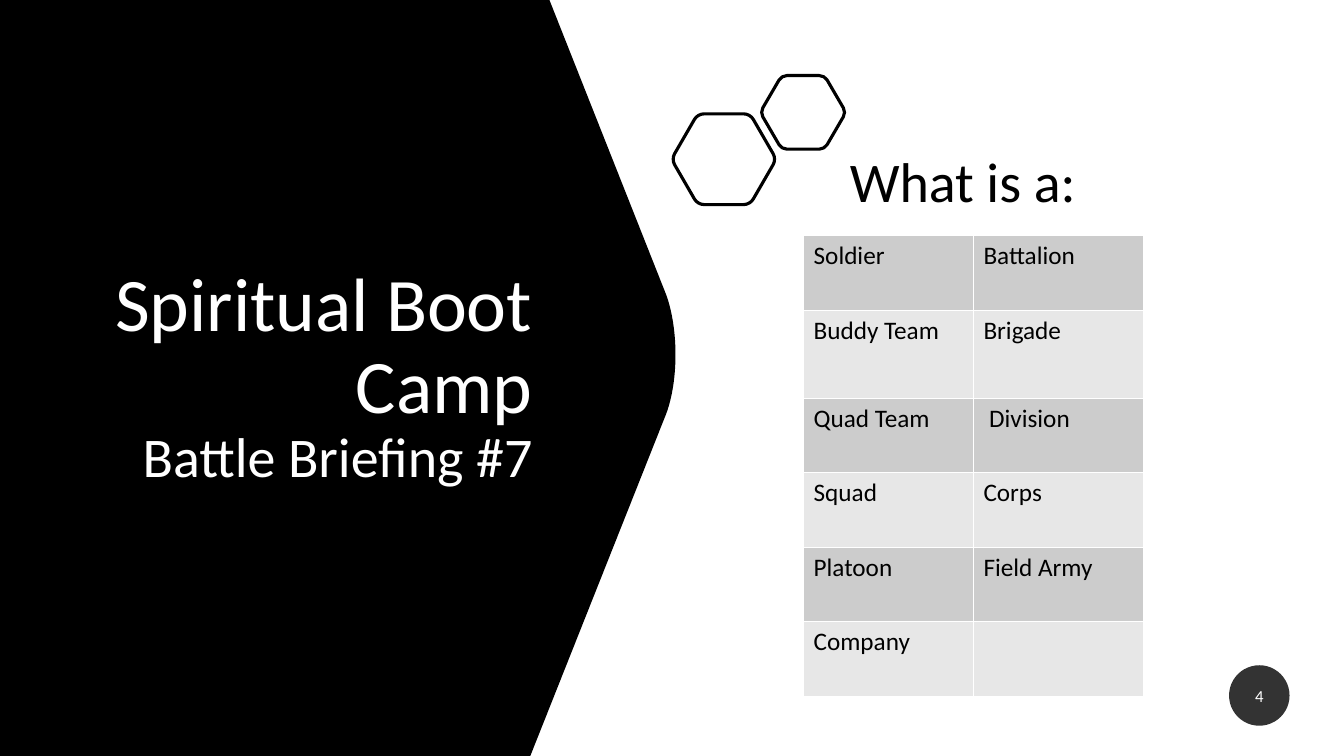
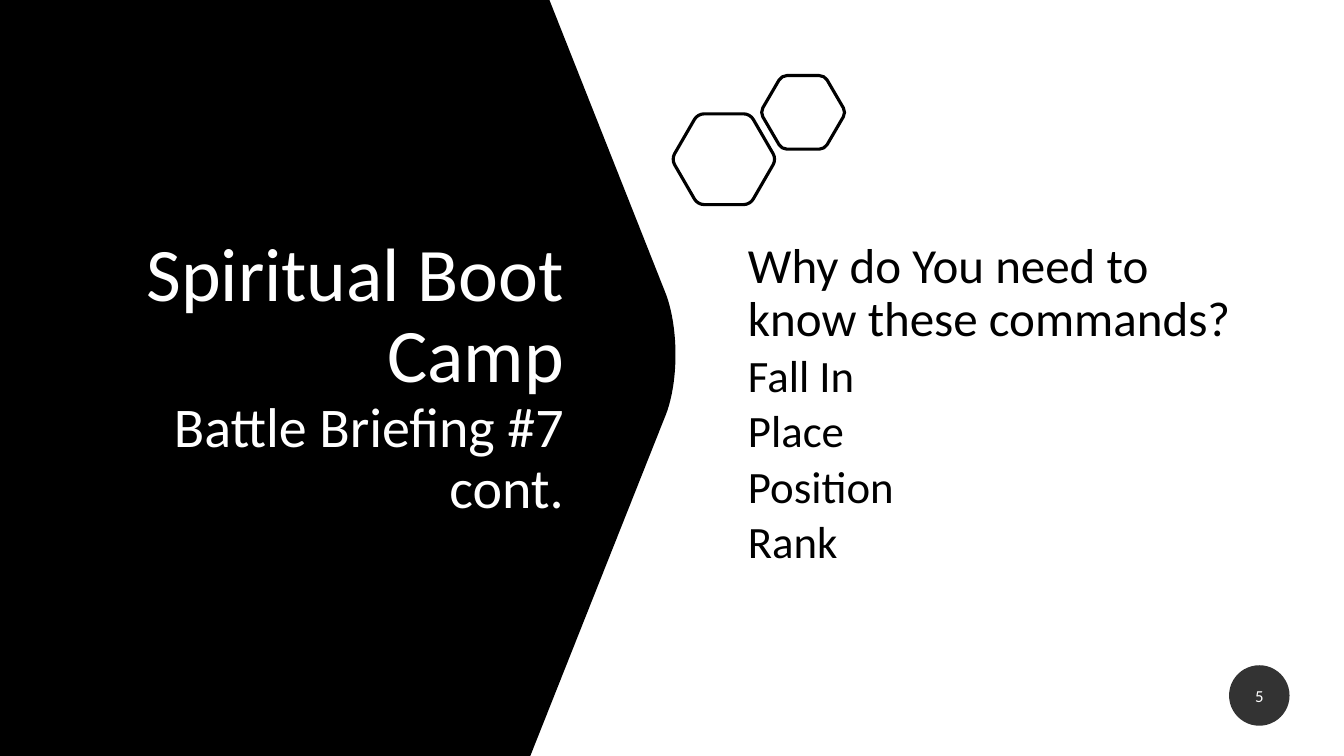
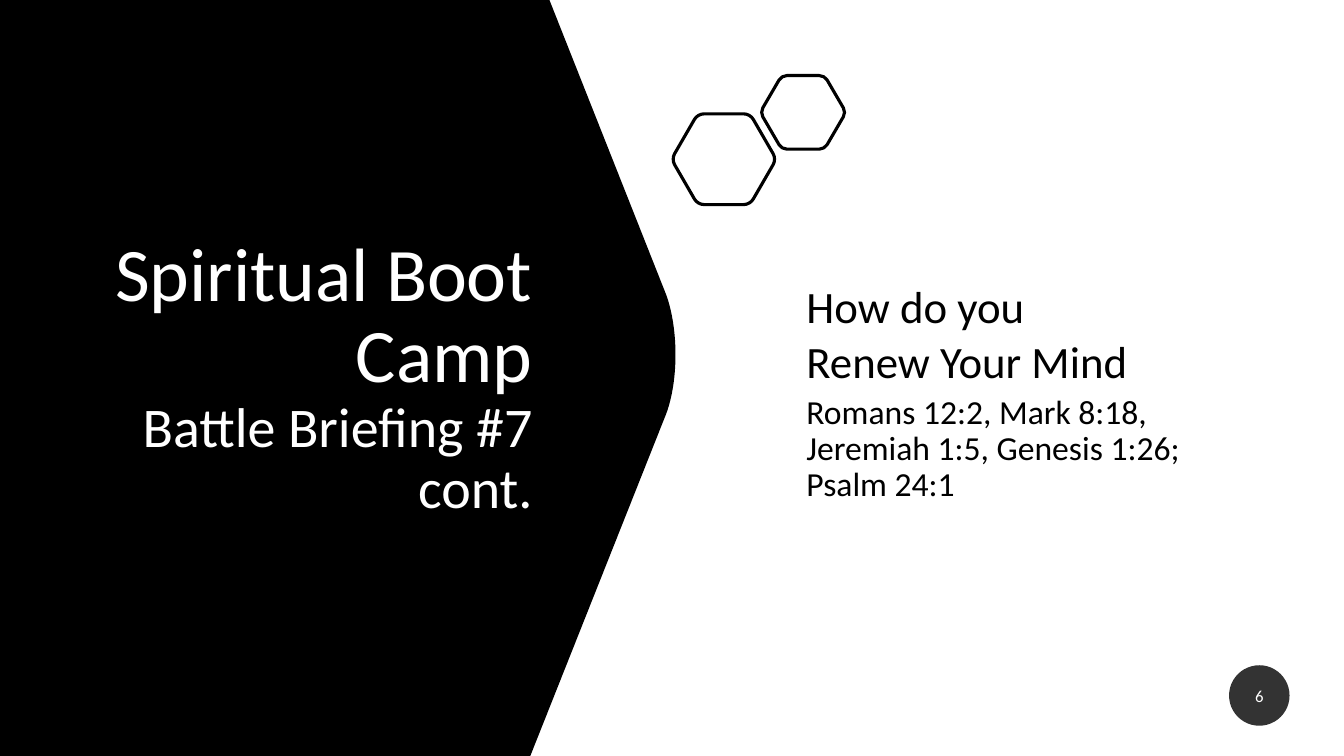
from lxml.etree import SubElement
from pptx import Presentation
from pptx.dml.color import RGBColor
from pptx.enum.shapes import MSO_SHAPE as Shape
from pptx.enum.text import MSO_ANCHOR as Anchor, PP_ALIGN as Align
from pptx.oxml.ns import qn
from pptx.util import Emu, Pt

PX = 9144  # 100 px to the inch
FONT = "Calibri"
BLACK, WHITE, BADGE = "000000", "FFFFFF", "333333"
ROW_FILLS = ("CCCCCC", "E7E7E7")
LINE_SPACING = 0.9
HEXAGONS = ((666, 113, 104, 90), (754, 75, 85, 73))
UNITS = (
    ("Soldier", "Battalion"),
    ("Buddy Team", "Brigade"),
    ("Quad Team", " Division"),
    ("Squad", "Corps"),
    ("Platoon", "Field Army"),
    ("Company", ""),
)
ROW_HEIGHTS = (74, 87, 74, 74, 74, 74)


def px(*lengths):
    return [Emu(round(length * PX)) for length in lengths]


def color(hex_string):
    return RGBColor.from_string(hex_string)


def set_font(font, size, hex_string):
    font.name, font.size = FONT, Pt(size)
    font.color.rgb = color(hex_string)


def add_outline(shapes, start, segments):
    """Closed outline; a segment holds one point (line) or three (Bezier curve)."""
    builder = shapes.build_freeform(*px(*start))
    points = [px(*point) for segment in segments for point in segment]
    builder.add_line_segments(points, close=True)
    outline = builder.convert_to_shape()
    outline.shadow.inherit = False
    lines = iter(list(outline.element.iter(qn("a:lnTo"))))
    for segment in segments:
        steps = [next(lines) for _ in segment]
        if len(steps) == 3:
            bend = SubElement(steps[0].getparent(), qn("a:cubicBezTo"))
            steps[0].addprevious(bend)
            for step in steps:
                bend.append(step[0])
                step.getparent().remove(step)
    return outline


def add_panel(slide):
    panel = add_outline(slide.shapes, (0, 0), [
        [(545, 0)],
        [(661, 293)],
        [(673, 327), (673, 377), (661, 410)],
        [(526, 750)],
        [(0, 750)],
    ])
    panel.fill.solid()
    panel.fill.fore_color.rgb = color(BLACK)
    panel.line.fill.background()


def toward(start, end, share):
    return tuple(a + (b - a) * share for a, b in zip(start, end))


def add_hexagon(shapes, left, top, width, height):
    """Hexagon outline with rounded corners."""
    near, far = left + width / 4, left + width * 3 / 4
    middle, bottom = top + height / 2, top + height
    corners = [(near, top), (far, top), (left + width, middle),
               (far, bottom), (near, bottom), (left, middle)]
    segments = []
    for index, corner in enumerate(corners):
        before, after = corners[index - 1], corners[(index + 1) % 6]
        segments += [
            [toward(corner, before, 0.12)],
            [toward(corner, before, 0.05), toward(corner, after, 0.05),
             toward(corner, after, 0.12)],
        ]
    hexagon = add_outline(shapes, segments[0][0], segments[1:])
    hexagon.fill.background()
    hexagon.line.color.rgb = color(BLACK)
    hexagon.line.width = Pt(2.25)


def add_badge(slide, number):
    badge = slide.shapes.add_shape(Shape.OVAL, *px(1219, 660, 60, 60))
    badge.shadow.inherit = False
    badge.fill.solid()
    badge.fill.fore_color.rgb = color(BADGE)
    badge.line.fill.background()
    frame = badge.text_frame
    frame.vertical_anchor = Anchor.MIDDLE
    para = frame.paragraphs[0]
    para.text = str(number)
    para.alignment = Align.CENTER
    set_font(para.font, 12, WHITE)


def add_text_frame(slide, box, anchor=Anchor.MIDDLE):
    frame = slide.shapes.add_textbox(*px(*box)).text_frame
    frame.word_wrap = True
    frame.vertical_anchor = anchor
    return frame


def add_title(slide, box, subtitle_lines):
    para = add_text_frame(slide, box).paragraphs[0]
    para.alignment = Align.RIGHT
    para.line_spacing = LINE_SPACING
    lines = [("Spiritual Boot Camp", 54), *((line, 40) for line in subtitle_lines)]
    for index, (text, size) in enumerate(lines):
        if index:
            para.add_line_break()
        span = para.add_run()
        span.text = text
        set_font(span.font, size, WHITE)


def add_body(slide, box, lines):
    frame = add_text_frame(slide, box)
    for index, (text, size) in enumerate(lines):
        para = frame.add_paragraph() if index else frame.paragraphs[0]
        para.text = text
        para.line_spacing = LINE_SPACING
        para.space_before = Pt(5)
        set_font(para.font, size, BLACK)


def add_heading(slide, box, text):
    para = add_text_frame(slide, box, Anchor.TOP).paragraphs[0]
    para.text = text
    set_font(para.font, 40, BLACK)


def add_unit_table(slide):
    box = px(797, 234, 337, sum(ROW_HEIGHTS))
    table = slide.shapes.add_table(len(UNITS), 2, *box).table
    table.first_row = table.horz_banding = False
    for row_index, (names, height) in enumerate(zip(UNITS, ROW_HEIGHTS)):
        table.rows[row_index].height = px(height)[0]
        for column_index, name in enumerate(names):
            cell = table.cell(row_index, column_index)
            cell.fill.solid()
            cell.fill.fore_color.rgb = color(ROW_FILLS[row_index % 2])
            para = cell.text_frame.paragraphs[0]
            para.text = name
            set_font(para.font, 18, BLACK)


def add_briefing(deck, number, title_box, *subtitle_lines):
    """Slide with the shared panel, hexagons, title and number."""
    slide = deck.slides.add_slide(deck.slide_layouts[6])
    add_panel(slide)
    add_title(slide, title_box, subtitle_lines)
    group = slide.shapes.add_group_shape()
    for hexagon in HEXAGONS:
        add_hexagon(group.shapes, *hexagon)
    add_badge(slide, number)
    return slide


def main():
    deck = Presentation()
    deck.slide_width, deck.slide_height = px(1333, 750)
    narrow, wide = (84, 141, 454, 468), (27, 141, 542, 468)

    units = add_briefing(deck, 4, narrow, "Battle Briefing #7")
    add_unit_table(units)
    add_heading(units, (833, 140, 264, 77), "What is a:")

    commands = add_briefing(deck, 5, wide, "Battle Briefing #7", "cont.")
    add_body(commands, (732, 243, 517, 317), [
        ("Why do You need to know these commands?", 35),
        *((word, 32) for word in ("Fall In", "Place", "Position", "Rank")),
    ])

    renewal = add_briefing(deck, 6, narrow, "Battle Briefing #7 cont.")
    add_body(renewal, (790, 207, 472, 368), [
        ("How do you", 32),
        ("Renew Your Mind", 32),
        ("Romans 12:2, Mark 8:18, Jeremiah 1:5, Genesis 1:26; Psalm 24:1", 24),
    ])
    deck.save("out.pptx")


if __name__ == "__main__":
    main()
